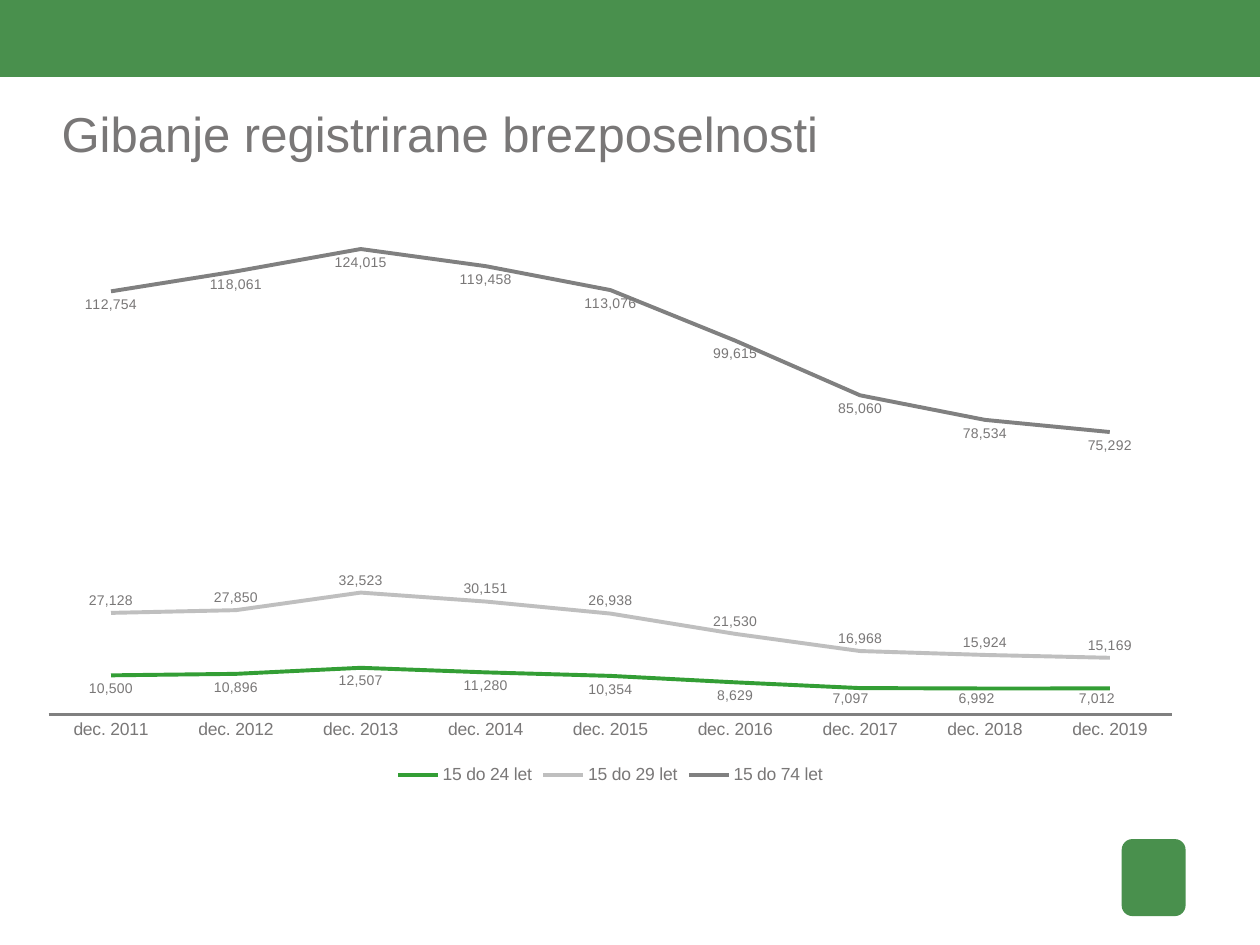
from dataclasses import dataclass

from lxml.etree import SubElement
from pptx import Presentation
from pptx.chart.chart import Chart
from pptx.chart.data import CategoryChartData
from pptx.dml.color import RGBColor
from pptx.enum.chart import (XL_CHART_TYPE, XL_LABEL_POSITION, XL_LEGEND_POSITION,
                             XL_MARKER_STYLE, XL_TICK_LABEL_POSITION, XL_TICK_MARK)
from pptx.enum.shapes import MSO_SHAPE
from pptx.enum.text import MSO_ANCHOR
from pptx.oxml import parse_xml
from pptx.oxml.ns import nsdecls, qn
from pptx.slide import Slide
from pptx.util import Pt

FONT = "Arial"
GREEN = "49904D"
TEXT_GREY = "797777"
LINE_GREY = "808080"
NUMBER_FORMAT = "#,##0"


@dataclass
class Box:
    left: float
    top: float
    width: float
    height: float

    def lengths(self) -> tuple:
        return Pt(self.left), Pt(self.top), Pt(self.width), Pt(self.height)


@dataclass
class AgeGroup:
    name: str
    color: str
    label_position: XL_LABEL_POSITION
    counts: tuple


YEARS = range(2011, 2020)
BELOW, ABOVE = XL_LABEL_POSITION.BELOW, XL_LABEL_POSITION.ABOVE
AGE_GROUPS = [
    AgeGroup("15 do 24 let", "339E35", BELOW,
             (10500, 10896, 12507, 11280, 10354, 8629, 7097, 6992, 7012)),
    AgeGroup("15 do 29 let", "BFBFBF", ABOVE,
             (27128, 27850, 32523, 30151, 26938, 21530, 16968, 15924, 15169)),
    AgeGroup("15 do 74 let", LINE_GREY, BELOW,
             (112754, 118061, 124015, 119458, 113076, 99615, 85060, 78534, 75292)),
]
# Labels of the youngest group nudged towards the line: index -> (x, y) share of chart
NUDGED_LABELS = {6: (-0.008, -0.005), 7: (-0.007, -0.005), 8: (-0.011, -0.005)}


def rgb(color: str) -> RGBColor:
    return RGBColor.from_string(color)


def set_font(font, size: float, color: str = TEXT_GREY) -> None:
    font.name = FONT
    font.size = Pt(size)
    font.color.rgb = rgb(color)


def add_text(slide: Slide, box: Box, text: str, *, size: float, color: str = TEXT_GREY) -> None:
    frame = slide.shapes.add_textbox(*box.lengths()).text_frame
    frame.word_wrap = True
    frame.vertical_anchor = MSO_ANCHOR.TOP
    frame.margin_left = frame.margin_top = frame.margin_right = frame.margin_bottom = 0
    run = frame.paragraphs[0].add_run()
    run.text = text
    set_font(run.font, size, color)


def add_block(slide: Slide, box: Box, kind: MSO_SHAPE, color: str) -> None:
    block = slide.shapes.add_shape(kind, *box.lengths())
    block.shadow.inherit = False
    block.fill.solid()
    block.fill.fore_color.rgb = rgb(color)
    block.line.fill.background()


def manual_layout(modes: dict, **shares: float):
    layout = parse_xml(f"<c:layout {nsdecls('c')}><c:manualLayout/></c:layout>")
    for tag, value in {**modes, **shares}.items():
        SubElement(layout[0], qn(f"c:{tag}")).set("val", str(value))
    return layout


def style_axes(chart: Chart) -> None:
    months, counts = chart.category_axis, chart.value_axis
    for axis in (months, counts):
        axis.major_tick_mark = axis.minor_tick_mark = XL_TICK_MARK.NONE
        axis.has_major_gridlines = False
    months.format.line.color.rgb = rgb(LINE_GREY)
    months.format.line.width = Pt(1.5)
    counts.tick_label_position = XL_TICK_LABEL_POSITION.NONE
    counts.format.line.fill.background()
    counts.minimum_scale, counts.maximum_scale, counts.major_unit = 0, 125000, 10000


def style_group(series, group: AgeGroup) -> None:
    series.smooth = False
    series.marker.style = XL_MARKER_STYLE.NONE
    series.format.line.color.rgb = rgb(group.color)
    series.format.line.width = Pt(2.25)
    labels = series.data_labels
    labels.show_value = True
    labels.position = group.label_position
    labels.number_format = NUMBER_FORMAT
    labels.number_format_is_linked = False
    set_font(labels.font, 8)


def nudge_label(series, index: int, x: float, y: float) -> None:
    label = series.points[index].data_label
    label.position = BELOW
    set_font(label.font, 8)
    number_format = parse_xml(
        f'<c:numFmt {nsdecls("c")} formatCode="{NUMBER_FORMAT}" sourceLinked="0"/>')
    position = series.data_labels._element.xpath(f"c:dLbl/c:idx[@val='{index}']")[0]
    position.addnext(number_format)
    position.addnext(manual_layout({}, x=x, y=y))


def add_unemployment_chart(slide: Slide, box: Box) -> None:
    data = CategoryChartData(number_format=NUMBER_FORMAT)
    data.categories = [f"dec. {year}" for year in YEARS]
    for group in AGE_GROUPS:
        data.add_series(group.name, group.counts)
    chart = slide.shapes.add_chart(XL_CHART_TYPE.LINE, *box.lengths(), data).chart
    chart.has_title = False
    set_font(chart.font, 10)
    chart.has_legend = True
    chart.legend.position = XL_LEGEND_POSITION.BOTTOM
    chart.legend.include_in_layout = False
    style_axes(chart)

    plot = chart.plots[0]
    plot.vary_by_categories = False
    for series, group in zip(plot.series, AGE_GROUPS):
        style_group(series, group)
    for index, (x, y) in NUDGED_LABELS.items():
        nudge_label(plot.series[0], index, x, y)

    # Fixed plot area
    plot_area = chart._chartSpace.chart.plotArea
    for layout in plot_area.findall(qn("c:layout")):
        plot_area.remove(layout)
    modes = {"layoutTarget": "inner", "xMode": "edge", "yMode": "edge"}
    plot_area.insert(0, manual_layout(modes, x=0.02, y=0.02, w=0.96, h=0.845))


def main() -> None:
    presentation = Presentation()
    presentation.slide_width, presentation.slide_height = Pt(720), Pt(540)
    slide = presentation.slides.add_slide(presentation.slide_layouts[6])

    # Header band and plain emblem
    add_block(slide, Box(0, -0.7, 720, 44.7), MSO_SHAPE.RECTANGLE, GREEN)
    add_block(slide, Box(641, 479.5, 36.5, 44), MSO_SHAPE.ROUNDED_RECTANGLE, GREEN)

    # Title and chart
    add_text(slide, Box(35.3, 59, 666.7, 51), "Gibanje registrirane brezposelnosti", size=28)
    add_unemployment_chart(slide, Box(14.4, 133.9, 668.9, 317.5))

    presentation.save("out.pptx")


if __name__ == "__main__":
    main()
